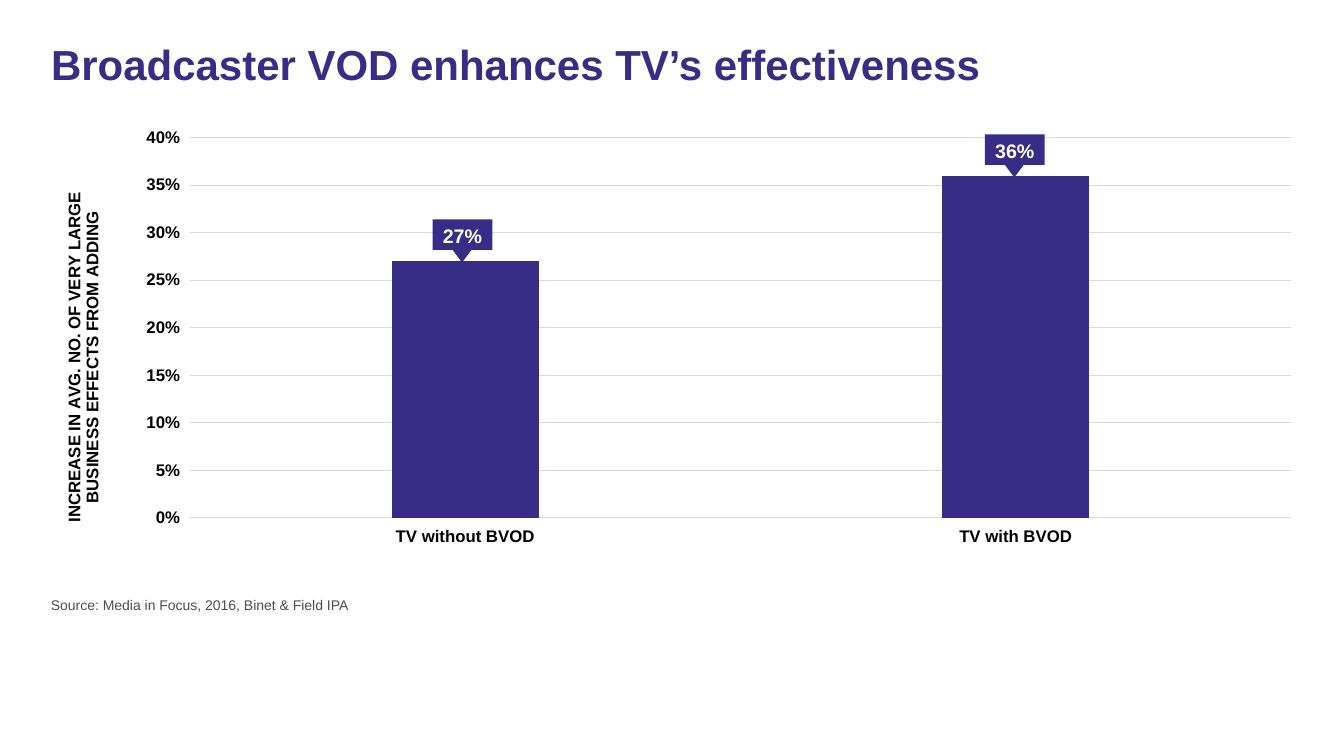
from pptx import Presentation
from pptx import util as u
from pptx.chart.data import CategoryChartData
from pptx.dml.color import RGBColor
from pptx.enum import chart as charts, shapes, text
from pptx.oxml import parse_xml
from pptx.oxml.ns import nsdecls, qn

PX = 9525
FONT = "Arial"
PURPLE = RGBColor(0x37, 0x2D, 0x87)
BLACK = RGBColor(0, 0, 0)
WHITE = RGBColor(255, 255, 255)
GREY = RGBColor(0x4D, 0x4D, 0x4D)
GRID = RGBColor(0xDB, 0xDB, 0xDB)
EFFECTS = {"TV without BVOD": 0.27, "TV with BVOD": 0.36}
CALLOUTS = [(412, 209), (938, 128)]


def px(*lengths):
    return [u.Emu(length * PX) for length in lengths]


def style(font, size, color, bold=True):
    font.name = FONT
    font.size = u.Pt(size)
    font.bold = bold
    font.color.rgb = color


def fill_frame(frame, words, size, color, bold=True,
               align=text.PP_ALIGN.LEFT, anchor=text.MSO_ANCHOR.TOP):
    frame.text = words
    frame.word_wrap = True
    frame.auto_size = text.MSO_AUTO_SIZE.NONE
    frame.vertical_anchor = anchor
    paragraph = frame.paragraphs[0]
    paragraph.alignment = align
    style(paragraph.runs[0].font, size, color, bold)
    return paragraph


def add_title(slide, left, top, width, height):
    title = slide.shapes.title
    title.left, title.top, title.width, title.height = px(left, top, width, height)
    paragraph = fill_frame(title.text_frame,
                           "Broadcaster VOD enhances TV’s effectiveness", 30, PURPLE)
    paragraph.line_spacing = 0.9


def add_source(slide, left, top, width, height):
    box = slide.shapes.add_textbox(*px(left, top, width, height))
    fill_frame(box.text_frame, "Source: Media in Focus, 2016, Binet & Field IPA",
               10, GREY, bold=False)


def place(element, target="", **values):
    """Lay out a chart part in fractions of the chart area."""
    entries = "".join(f'<c:{name} val="{value}"/>' for name, value in values.items())
    layout = parse_xml(f'<c:layout {nsdecls("c")}><c:manualLayout>{target}'
                       f'<c:xMode val="edge"/><c:yMode val="edge"/>{entries}'
                       '</c:manualLayout></c:layout>')
    for old in element.findall(qn("c:layout")):
        element.remove(old)
    words = element.find(qn("c:tx"))
    element.insert(0 if words is None else element.index(words) + 1, layout)


def add_axis_title(axis):
    title = axis.axis_title
    frame = title.text_frame
    frame.text = "INCREASE IN AVG. NO. OF VERY LARGE\nBUSINESS EFFECTS FROM ADDING"
    for paragraph in frame.paragraphs:
        paragraph.alignment = text.PP_ALIGN.CENTER
        style(paragraph.font, 12, BLACK)
        style(paragraph.runs[0].font, 12, BLACK)
    body = frame.paragraphs[0]._p.getparent().find(qn("a:bodyPr"))
    body.set("rot", "-5400000")
    body.set("vert", "horz")
    place(title._element, x=0.01, y=0.16)


def add_effects_chart(slide, left, top, width, height):
    data = CategoryChartData(number_format="0%")
    data.categories = list(EFFECTS)
    data.add_series("Series 1", list(EFFECTS.values()))
    chart = slide.shapes.add_chart(charts.XL_CHART_TYPE.COLUMN_CLUSTERED,
                                   *px(left, top, width, height), data).chart
    chart.has_legend = False
    chart.has_title = False
    style(chart.font, 18, BLACK, bold=False)

    plot = chart.plots[0]
    plot.gap_width = 275
    plot.vary_by_categories = False
    bars = plot.series[0].format
    bars.fill.solid()
    bars.fill.fore_color.rgb = PURPLE

    for axis in (chart.category_axis, chart.value_axis):
        style(axis.tick_labels.font, 12, BLACK)
        axis.format.line.fill.background()

    axis = chart.value_axis
    axis.minimum_scale, axis.maximum_scale, axis.major_unit = 0, 0.4, 0.05
    axis.tick_labels.number_format = "0%"
    axis.tick_labels.number_format_is_linked = False
    axis.major_gridlines.format.line.color.rgb = GRID
    axis.major_gridlines.format.line.width = u.Pt(0.75)
    add_axis_title(axis)

    place(chart._chartSpace.chart.plotArea, '<c:layoutTarget val="inner"/>',
          x=0.114, y=0.07, w=0.886, h=0.666)


def add_callout(slide, left, top, width, height, label):
    """Add a value label with a pointer centred below it."""
    pointer_width, pointer_height = 18, 12
    box = slide.shapes.add_shape(shapes.MSO_SHAPE.RECTANGLE,
                                 *px(left, top, width, height))
    pointer = slide.shapes.add_shape(
        shapes.MSO_SHAPE.ISOSCELES_TRIANGLE,
        *px(left + (width - pointer_width) // 2, top + height,
            pointer_width, pointer_height))
    pointer.rotation = 180
    for shape in (box, pointer):
        shape.shadow.inherit = False
        shape.fill.solid()
        shape.fill.fore_color.rgb = PURPLE
        shape.line.fill.background()
    frame = box.text_frame
    frame.margin_left = frame.margin_right = 0
    frame.margin_top, frame.margin_bottom = px(2, 0)
    fill_frame(frame, label, 14, WHITE, align=text.PP_ALIGN.CENTER,
               anchor=text.MSO_ANCHOR.MIDDLE)


def main():
    presentation = Presentation()
    presentation.slide_width, presentation.slide_height = px(1280, 720)
    slide = presentation.slides.add_slide(presentation.slide_layouts[5])
    add_effects_chart(slide, 46, 93, 1184, 544)
    add_title(slide, 39, 37, 1190, 108)
    add_source(slide, 39, 563, 1190, 32)
    for (left, top), value in zip(CALLOUTS, EFFECTS.values()):
        add_callout(slide, left, top, 57, 29, f"{value:.0%}")
    presentation.save("out.pptx")


if __name__ == "__main__":
    main()
